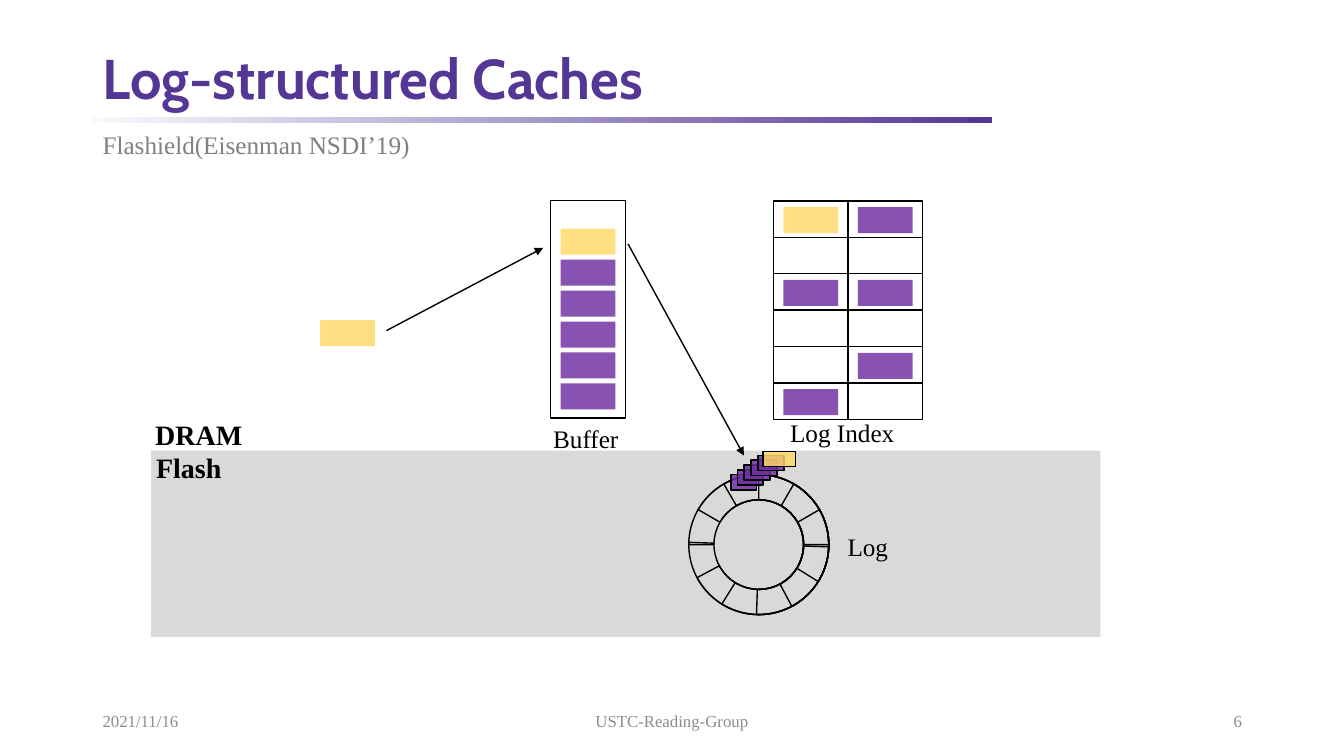
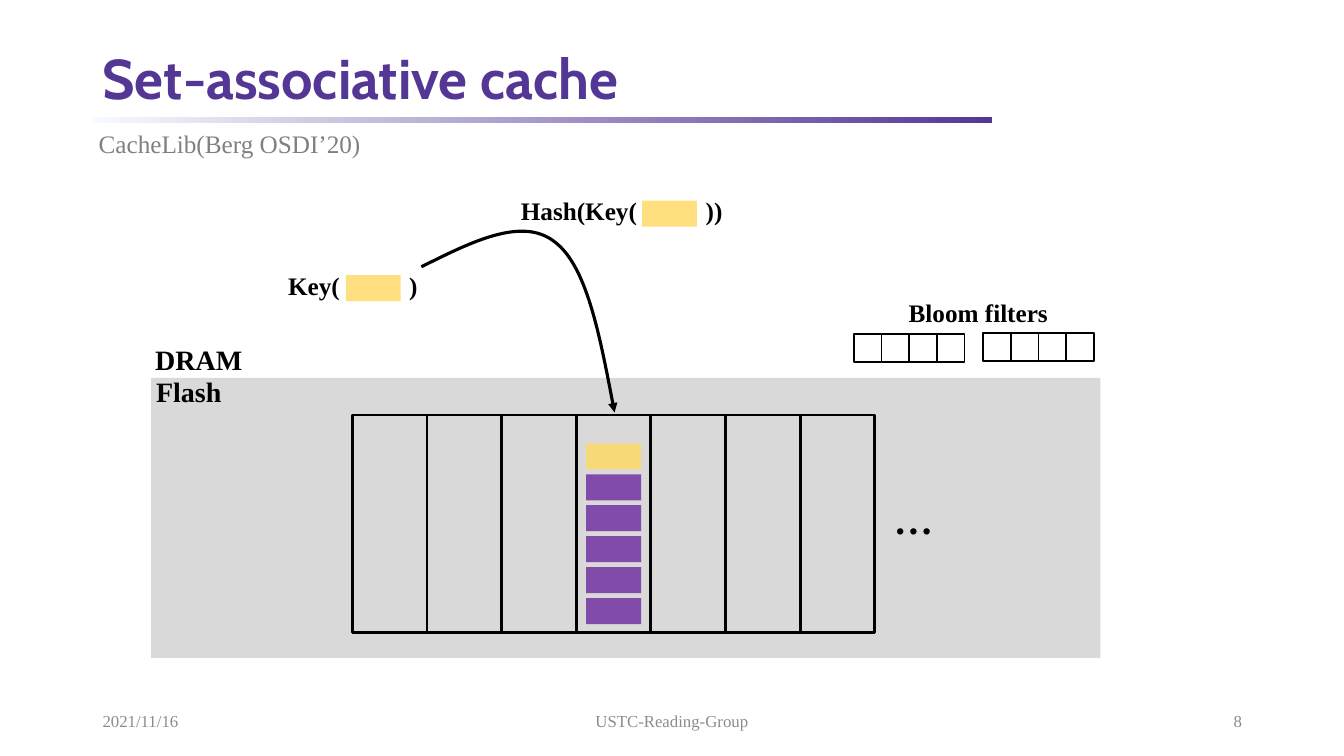
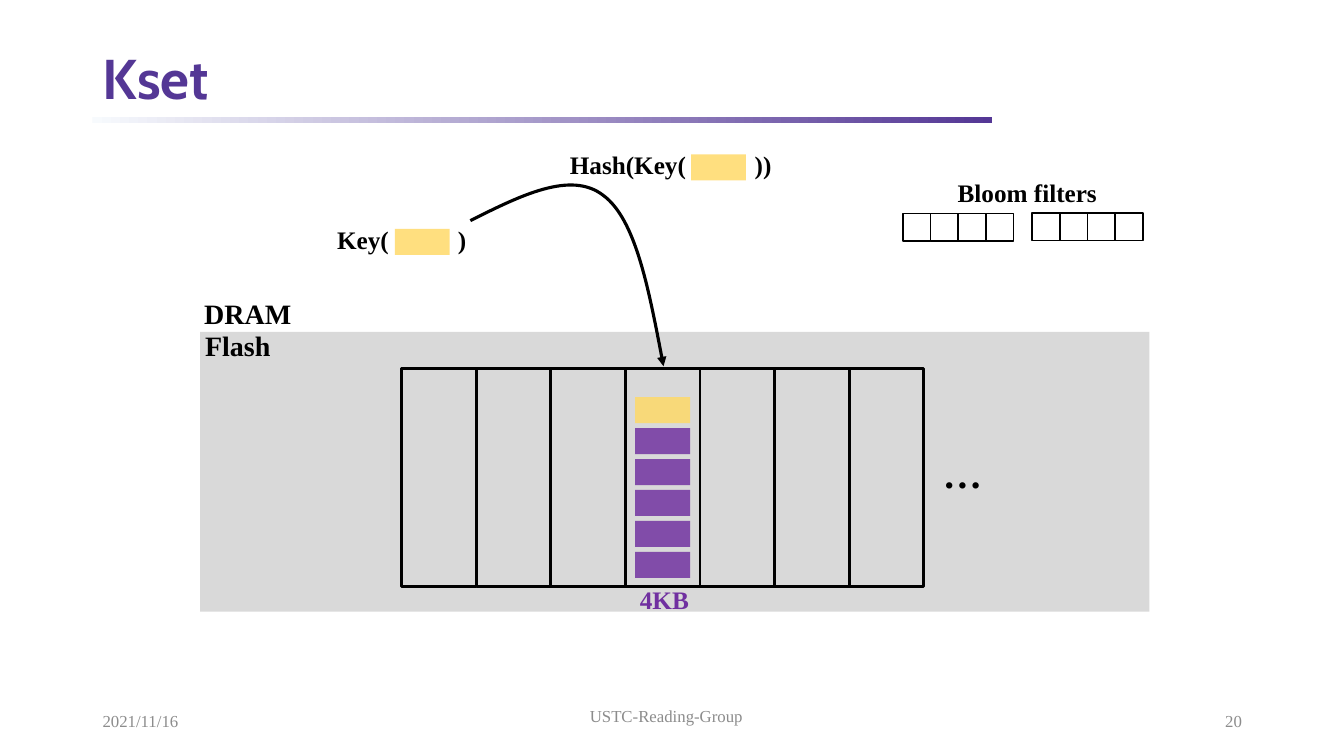
from dataclasses import dataclass

from lxml.etree import SubElement
from pptx import Presentation
from pptx.dml.color import RGBColor
from pptx.enum.shapes import MSO_CONNECTOR, MSO_SHAPE
from pptx.enum.text import MSO_ANCHOR, PP_ALIGN
from pptx.oxml.ns import qn
from pptx.util import Pt


@dataclass(frozen=True)
class Theme:
    accent: str = "543795"
    pale: str = "F7FAFD"
    flash: str = "D9D9D9"
    stored: str = "7030A0"
    incoming: str = "FFD966"
    ink: str = "000000"
    subtitle: str = "808080"
    footer: str = "8C8C8C"
    title_font: str = "Cabin"
    body_font: str = "Times New Roman"
    title_size: int = 40
    dots_size: int = 28
    layer_size: int = 20
    label_size: int = 18
    footer_size: int = 12
    item_opacity: int = 83


theme = Theme()
ITEM_WIDTH, ITEM_HEIGHT = 39.2, 18.6
COLUMN_WIDTH, COLUMN_HEIGHT = 53.3, 155.5
ITEM_INSET = 7


def add_text(page, text, left, top, width, height=28.8, size=theme.label_size,
             color=theme.ink, bold=False, font=theme.body_font, align=PP_ALIGN.LEFT,
             anchor=MSO_ANCHOR.TOP, spacing=None, tab=None):
    box = page.shapes.add_textbox(Pt(left), Pt(top), Pt(width), Pt(height))
    frame = box.text_frame
    frame.word_wrap = True
    frame.vertical_anchor = anchor
    para = frame.paragraphs[0]
    para.alignment = align
    para.line_spacing = spacing
    if tab:
        stops = SubElement(para._p.get_or_add_pPr(), qn("a:tabLst"))
        SubElement(stops, qn("a:tab"), pos=str(Pt(tab)), algn="l")
    span = para.add_run()
    span.text = text
    span.font.name = font
    span.font.size = Pt(size)
    span.font.bold = bold
    span.font.color.rgb = RGBColor.from_string(color)


def add_block(shapes, left, top, width=ITEM_WIDTH, height=ITEM_HEIGHT, fill=None,
              opacity=theme.item_opacity, line=None, kind=MSO_SHAPE.RECTANGLE):
    """Add a preset shape; line is the outline's weight, None for no outline."""
    block = shapes.add_shape(kind, Pt(left), Pt(top), Pt(width), Pt(height))
    block.shadow.inherit = False
    if fill:
        block.fill.solid()
        block.fill.fore_color.rgb = RGBColor.from_string(fill)
        if opacity < 100:
            color = block.element.spPr.find(".//" + qn("a:srgbClr"))
            SubElement(color, qn("a:alpha"), val=str(opacity * 1000))
    else:
        block.fill.background()
    if line:
        block.line.color.rgb = RGBColor.from_string(theme.ink)
        block.line.width = Pt(line)
    else:
        block.line.fill.background()
    return block


deck = Presentation()
deck.slide_width, deck.slide_height = Pt(960), Pt(540)
blank = deck.slide_layouts[6]

# Title, number, footer place, flash band (left, top, height), DRAM label top
outlines = [
    ("Log-structured Caches", "6", (318, 500.4), (108, 322, 133), 295),
    ("Set-associative cache", "8", (318, 500.4), (108, 270, 200), 241),
    ("Kset", "20", (314, 496.8), (143, 237, 200), 208),
]
pages = []
for title, number, (footer_left, footer_top), (left, top, height), label_top in outlines:
    page = deck.slides.add_slide(blank)
    pages.append(page)

    rule = add_block(page.shapes, 66, 83.8, 642.5, 4)
    rule.fill.gradient()
    rule.fill.gradient_angle = 0
    for stop, color in zip(rule.fill.gradient_stops, (theme.pale, theme.accent)):
        stop.color.rgb = RGBColor.from_string(color)
    add_text(page, title, 66.2, 31, 828, 54, size=theme.title_size, color=theme.accent,
             bold=True, font=theme.title_font, anchor=MSO_ANCHOR.MIDDLE, spacing=0.9)

    for text, text_left, text_top, width, align in [
        ("2021/11/16", 66.2, 500.4, 216, PP_ALIGN.LEFT),
        ("USTC-Reading-Group", footer_left, footer_top, 324, PP_ALIGN.CENTER),
        (number, 678.2, 500.4, 216, PP_ALIGN.RIGHT),
    ]:
        add_text(page, text, text_left, text_top, width, size=theme.footer_size,
                 color=theme.footer, align=align, anchor=MSO_ANCHOR.MIDDLE)

    add_block(page.shapes, left, top, 678, height, fill=theme.flash, opacity=100)
    add_text(page, "DRAM", left - 4.2, label_top, 78, 31.7, size=theme.layer_size, bold=True)
    add_text(page, "Flash", left - 3.6, label_top + 23, 62, 31.7,
             size=theme.layer_size, bold=True)

log_page, set_page, kset_page = pages
add_text(log_page, "Flashield(Eisenman NSDI’19)", 66.2, 88.6, 236.2, color=theme.subtitle)
add_text(set_page, "CacheLib(Berg OSDI’20)", 63.4, 88.2, 204, color=theme.subtitle)
arrows = []

# Log-structured cache: the ring of log segments
ring = log_page.shapes.add_group_shape()
for turn in range(0, 181, 30):
    arc = add_block(ring.shapes, 492, 339, 100, 100, line=1, kind=MSO_SHAPE.BLOCK_ARC)
    for index, value in enumerate((108, 1.11, 0.18)):
        arc.adjustments[index] = value
    arc.rotation = turn

# Log index: a grid of two columns and six rows
index_left, index_top, row_height = 552.5, 143.5, 26
index_items = {(0, 0): theme.incoming, (0, 1): theme.stored, (2, 0): theme.stored,
               (2, 1): theme.stored, (4, 1): theme.stored, (5, 0): theme.stored}
for row in range(6):
    for column in range(2):
        left = index_left + column * COLUMN_WIDTH
        top = index_top + row * row_height
        add_block(log_page.shapes, left, top, COLUMN_WIDTH, row_height, line=1)
        if (row, column) in index_items:
            add_block(log_page.shapes, left + ITEM_INSET, top + 4.5,
                      fill=index_items[row, column])

buffer_left, buffer_top = 393.4, 143.2
add_block(log_page.shapes, buffer_left, buffer_top, COLUMN_WIDTH, COLUMN_HEIGHT, line=1)
add_block(log_page.shapes, 228.6, 228.7, fill=theme.incoming)
for text, left, top, width in [
    ("Log Index", 557.3, 294.5, 90),
    ("Log", 598.3, 375.8, 44),
    ("Buffer", 388, 298.8, 62),
]:
    add_text(log_page, text, left, top, width)

# Items being appended to the log
appended = log_page.shapes.add_group_shape()
for step in range(5):
    add_block(appended.shapes, 522 + 4.85 * step, 339 - 3.4 * step, 18.4, 10.8,
              fill=theme.stored, line=1.25)
add_block(appended.shapes, 545, 322.5, 23.2, 10.8, fill=theme.incoming, line=1)

for start_x, start_y, end_x, end_y in [(276, 236.2, 388, 177), (448.6, 174.2, 531.4, 325.4)]:
    arrow = log_page.shapes.add_connector(
        MSO_CONNECTOR.STRAIGHT, Pt(start_x), Pt(start_y), Pt(end_x), Pt(end_y))
    arrows.append((arrow, 1))

# Set-associative diagrams: the same drawing, moved
stacks = [(log_page, buffer_left, buffer_top)]
for page, shift_x, shift_y, bloom_shift_y in [(set_page, 0, 0, 0), (kset_page, 35, -33, -86)]:
    sets_left, sets_top = 251.8 + shift_x, 296.5 + shift_y
    for column in range(7):
        add_block(page.shapes, sets_left + column * COLUMN_WIDTH, sets_top,
                  COLUMN_WIDTH, COLUMN_HEIGHT, line=2)
    stacks.append((page, sets_left + 3 * COLUMN_WIDTH, sets_top))
    add_text(page, "…", 631.4 + shift_x, 350.6 + shift_y, 43, 41,
             size=theme.dots_size, bold=True)

    for text, left, top, width, tab, item_left in [
        ("Key(\t)", 198.7, 189.4, 108, 86.4, 247),
        ("Hash(Key(\t))", 365, 136.1, 161, 132, 458.6),
    ]:
        add_block(page.shapes, item_left + shift_x, top + 7.2 + shift_y, fill=theme.incoming)
        add_text(page, text, left + shift_x, top + shift_y, width, bold=True, tab=tab)

    # The outline fixes the extent; its segments then become two Bézier curves
    builder = page.shapes.build_freeform(0, 25, scale=Pt(1))
    builder.add_line_segments([(95, 0), (138, 129)], close=False)
    curve = builder.convert_to_shape(Pt(301 + shift_x), Pt(165.6 + shift_y))
    curve.fill.background()
    outline = curve.element.spPr.find(".//" + qn("a:path"))
    for segment in outline.findall(qn("a:lnTo")):
        outline.remove(segment)
    for controls in [((36, 7), (72, -11), (95, 7)), ((118, 24), (128, 77), (138, 129))]:
        bezier = SubElement(outline, qn("a:cubicBezTo"))
        for x, y in controls:
            SubElement(bezier, qn("a:pt"), x=str(x), y=str(y))
    arrows.append((curve, 2.25))

    for filter_left, filter_top in [(609.8, 238.6), (702.2, 238)]:
        for bit in range(4):
            add_block(page.shapes, filter_left + bit * 19.8 + shift_x,
                      filter_top + bloom_shift_y, 19.8, 19.8, line=1.25)
    add_text(page, "Bloom filters", 642 + shift_x, 208.8 + bloom_shift_y, 116, bold=True)

add_text(kset_page, "4KB", 450, 414, 51, color=theme.stored, bold=True)

# Each full column holds one new item above five stored ones
for page, left, top in stacks:
    for slot in range(6):
        add_block(page.shapes, left + ITEM_INSET, top + 20.2 + slot * 22.1,
                  fill=theme.stored if slot else theme.incoming)

for arrow, weight in arrows:
    arrow.line.color.rgb = RGBColor.from_string(theme.ink)
    arrow.line.width = Pt(weight)
    properties = arrow.element.spPr
    SubElement(properties.find(qn("a:ln")), qn("a:tailEnd"), type="triangle")
    SubElement(properties, qn("a:effectLst"))

deck.save("out.pptx")
